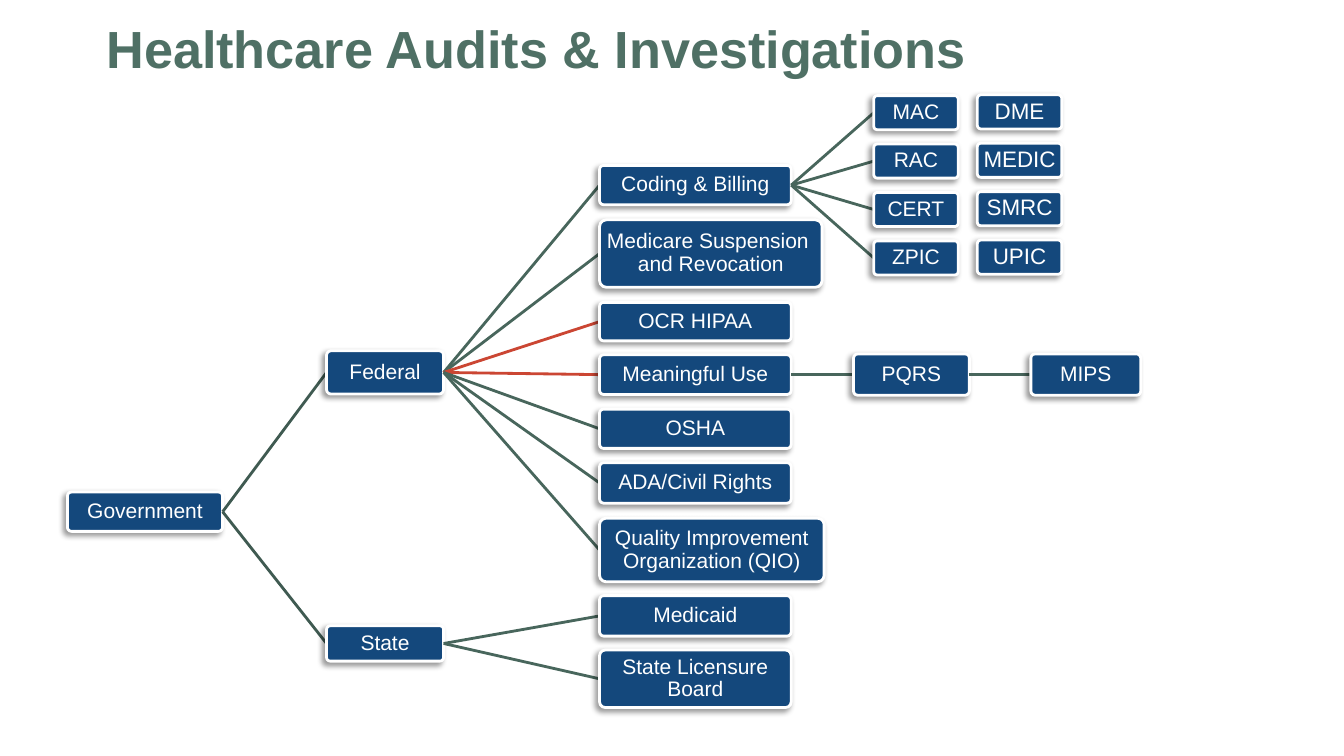
from lxml.etree import SubElement as Sub
from pptx import Presentation
from pptx.dml.color import RGBColor
from pptx.enum.shapes import MSO_CONNECTOR as Link, MSO_SHAPE as Shape
from pptx.enum.text import MSO_ANCHOR as Anchor, MSO_AUTO_SIZE as Auto, PP_ALIGN as Align
from pptx.oxml.ns import qn
from pptx.util import Cm, Pt

NAVY, WHITE, GREEN = "14487C", "FFFFFF", "4F7065"
DARK, MOSS, RED = "3F5A51", "48665C", "CB4633"
LEFT, MID, RIGHT = 8.23, 15.11, 22.02
WIDE, SLIM = 4.83, 2.13

# Branches from one box: text, left, top, width, height, line colour
FEDERAL = [
    ("Medicare Suspension \vand Revocation", MID, 5.54, 5.61, 1.7, MOSS),
    ("OCR HIPAA", MID, 7.62, WIDE, 0.97, RED),
    ("OSHA", MID, 10.31, WIDE, 0.99, MOSS),
    ("ADA/Civil Rights", MID, 11.66, WIDE, 1.02, MOSS),
    ("Quality Improvement Organization (QIO)", MID, 13.06, 5.66, 1.6, MOSS),
]
STATE = [
    ("Medicaid", MID, 15.01, WIDE, 1.02, MOSS),
    ("State Licensure Board", MID, 16.38, WIDE, 1.45, MOSS),
]
AUDITS = [("MAC", "DME"), ("RAC", "MEDIC"), ("CERT", "SMRC"), ("ZPIC", "UPIC")]


def color(code):
    return RGBColor.from_string(code)


def format_all(item, values):
    for name, value in values.items():
        setattr(item, name, value)


def set_font(para, size, code, bold=False):
    format_all(para.font, {"name": "Arial", "size": Pt(size), "bold": bold})
    para.font.color.rgb = color(code)


def add_shadow(box):
    effects = box._element.spPr.find(qn("a:effectLst"))
    shade = Sub(effects, qn("a:outerShdw"), blurRad=str(Pt(4)), dist=str(Pt(3)),
                dir=str(135 * 60000), rotWithShape="0")
    black = Sub(shade, qn("a:srgbClr"), val="000000")
    Sub(black, qn("a:alpha"), val="40000")


def add_box(slide, text, left, top, width, height, size=15):
    box = slide.shapes.add_shape(Shape.ROUNDED_RECTANGLE, Cm(left), Cm(top),
                                 Cm(width), Cm(height))
    box.adjustments[0] = 0.1
    box.fill.solid()
    box.fill.fore_color.rgb = color(NAVY)
    box.line.color.rgb = color(WHITE)
    box.line.width = Pt(2)
    box.shadow.inherit = False
    add_shadow(box)
    frame = box.text_frame
    inset = Cm(0.03)
    format_all(frame, {"text": text, "word_wrap": True,
                       "vertical_anchor": Anchor.MIDDLE,
                       "margin_left": inset, "margin_right": inset,
                       "margin_top": inset, "margin_bottom": inset})
    para = frame.paragraphs[0]
    format_all(para, {"alignment": Align.CENTER, "line_spacing": 0.9})
    set_font(para, size, WHITE)
    return box


def add_branch(slide, root, text, left, top, width, height, code):
    # The line goes in first so that it lies behind its box
    line = slide.shapes.add_connector(Link.STRAIGHT, 0, 0, 0, 0)
    line.line.color.rgb = color(code)
    line.line.width = Pt(2)
    Sub(line._element.spPr, qn("a:effectLst"))
    box = add_box(slide, text, left, top, width, height)
    line.begin_connect(root, 3)
    line.end_connect(box, 1)
    return box


def add_title(slide, text):
    title = slide.shapes.title
    format_all(title, {"left": Cm(2.31), "top": Cm(1.14),
                       "width": Cm(30.48), "height": Cm(0.94)})
    frame = title.text_frame
    format_all(frame, {"text": text, "word_wrap": True, "auto_size": Auto.NONE,
                       "vertical_anchor": Anchor.TOP,
                       "margin_left": Cm(0.37), "margin_right": Cm(0.51),
                       "margin_top": 0, "margin_bottom": 0})
    para = frame.paragraphs[0]
    format_all(para, {"alignment": Align.LEFT, "line_spacing": Pt(24)})
    set_font(para, 37.3, GREEN, True)


def main():
    deck = Presentation()
    format_all(deck, {"slide_width": Cm(33.87), "slide_height": Cm(19.05)})
    slide = deck.slides.add_slide(deck.slide_layouts[5])
    add_title(slide, "Healthcare Audits & Investigations")

    # Levels of government
    root = add_box(slide, "Government", 1.7, 12.4, 3.91, 0.99)
    federal = add_branch(slide, root, "Federal", LEFT, 8.84, 2.95, 1.09, DARK)
    state = add_branch(slide, root, "State", LEFT, 15.77, 2.95, 0.89, DARK)

    # Areas of audit
    coding = add_branch(slide, federal, "Coding & Billing", MID, 4.17, WIDE, 0.99, MOSS)
    usage = add_branch(slide, federal, "Meaningful Use", MID, 8.94, WIDE, 1, RED)
    for parent, leaves in ((federal, FEDERAL), (state, STATE)):
        for leaf in leaves:
            add_branch(slide, parent, *leaf)

    # Quality programs
    quality = add_branch(slide, usage, "PQRS", 21.51, 8.92, 2.92, 1.04, MOSS)
    add_branch(slide, quality, "MIPS", 25.98, 8.92, 2.77, 1.04, MOSS)

    # Audit contractors, two columns
    for row, (first, second) in enumerate(AUDITS):
        top = 2.41 + 1.22 * row
        add_branch(slide, coding, first, RIGHT, top, SLIM, 0.86, MOSS)
        add_box(slide, second, 24.63, top - 0.02, SLIM, 0.86, 16)

    deck.save("out.pptx")


if __name__ == "__main__":
    main()
